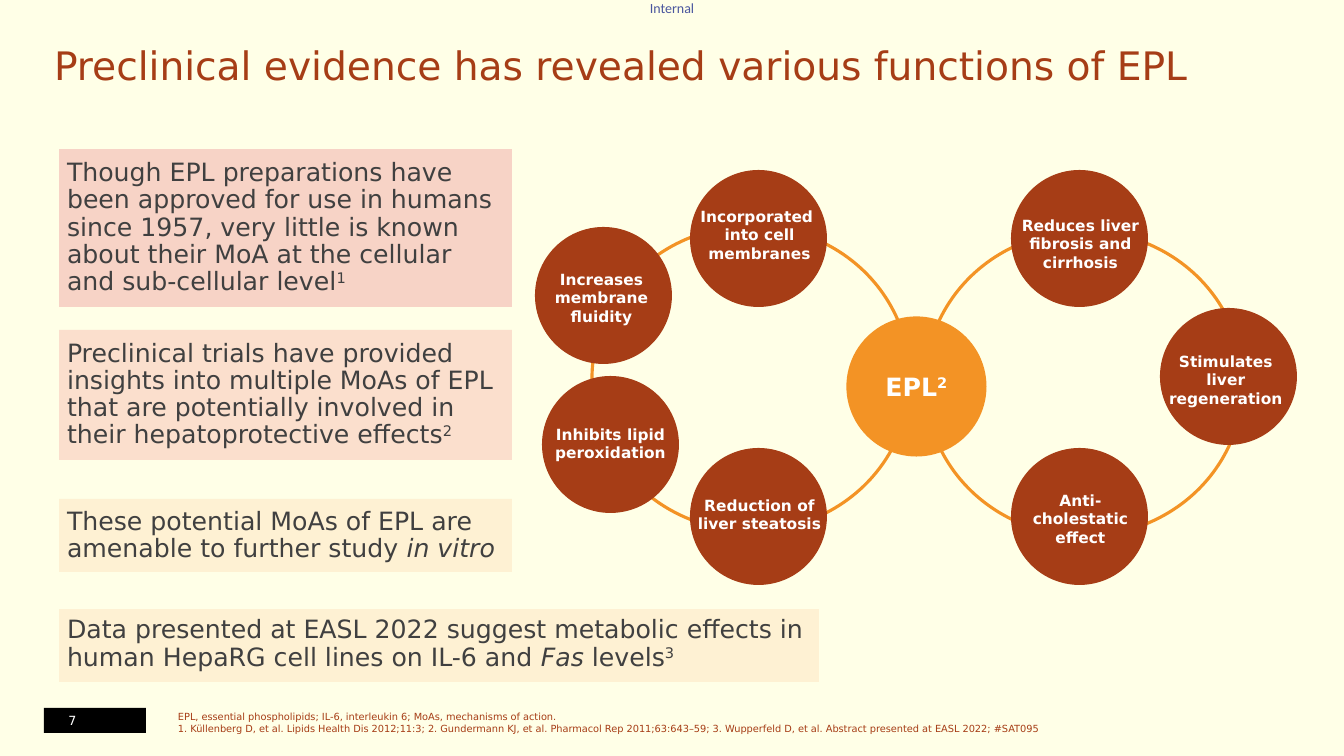
from pptx import Presentation
from pptx.dml.color import RGBColor
from pptx.enum.shapes import MSO_SHAPE as Preset
from pptx.enum.text import MSO_ANCHOR as Anchor, PP_ALIGN as Align
from pptx.util import Pt

EMU_PER_PX = 914400 / 100.8
RUST, ORANGE, CREAM, WHITE = "A63D16", "F39325", "FEF1D3", "FFFFFF"
CIRCLE, LABEL_WIDTH, LABEL_HEIGHT = 137, 131, 47
STATEMENTS = [
    ((59, 149, 453, 158), "F7D3C6", Anchor.MIDDLE,
     [("Though EPL preparations have\nbeen approved for use in humans since 1957, very little is "
       "known about their MoA at the cellular and sub-cellular level", ""), ("1", "super")]),
    ((59, 330, 453, 130), "FBDFCD", Anchor.MIDDLE,
     [("Preclinical trials have provided insights into multiple MoAs of EPL that are potentially "
       "involved in their hepatoprotective effects", ""), ("2", "super")]),
    ((59, 499, 453, 73), CREAM, Anchor.MIDDLE,
     [("These potential MoAs of EPL are amenable to further study ", ""), ("in vitro", "italic")]),
    ((59, 609, 760, 73), CREAM, Anchor.TOP,
     [("Data presented at EASL 2022 suggest metabolic effects in human HepaRG cell lines on "
       "IL-6 and ", ""), ("Fas ", "italic"), ("levels", ""), ("3", "super")]),
]
FUNCTIONS = [
    ((690, 170), (694, 211), "Incorporated \ninto cell membranes"),
    ((535, 227), (536, 274), "Increases membrane fluidity"),
    ((542, 376), (545, 420), "Inhibits lipid peroxidation"),
    ((690, 448), (694, 491), "Reduction of liver steatosis"),
    ((1011, 170), (1015, 220), "Reduces liver fibrosis and cirrhosis"),
    ((1011, 448), (1015, 495), "Anti-cholestatic\neffect"),
    ((1160, 308), (1163, 356), "Stimulates \nliver \nregeneration "),
]
FOOTNOTE = (
    "EPL, essential phospholipids; IL-6, interleukin 6; MoAs, mechanisms of action.\n"
    "1. Küllenberg D, et al. Lipids Health Dis 2012;11:3; 2. Gundermann KJ, et al. Pharmacol Rep "
    "2011;63:643–59; 3. Wupperfeld D, et al. Abstract presented at EASL 2022; #SAT095")


def px(*lengths):
    """Turn pixel lengths into EMU."""
    return [round(length * EMU_PER_PX) for length in lengths]


def paint(color_format, hex_color):
    """Give a fill or a font its solid colour."""
    color_format.rgb = RGBColor.from_string(hex_color)


def write(frame, parts, size, color, bold=False, align=Align.LEFT, anchor=Anchor.MIDDLE,
          inset=0, spacing=1.0, font="DejaVu Sans"):
    """Fill a text frame with one paragraph of plain, italic and superscript parts."""
    frame.word_wrap = True
    frame.vertical_anchor = anchor
    (frame.margin_left, frame.margin_top,
     frame.margin_right, frame.margin_bottom) = px(inset, inset, inset, inset)
    paragraph = frame.paragraphs[0]
    paragraph.text = parts[0][0]
    paragraph.alignment = align
    paragraph.line_spacing = spacing
    paragraph.space_before = Pt(0)
    for text, style in parts[1:]:
        extra = paragraph.add_run()
        extra.text = text
        extra.font.italic = style == "italic"
        if style == "super":
            extra._r.get_or_add_rPr().set("baseline", "30000")
    for run in paragraph.runs:
        run.font.name = font
        run.font.size = Pt(size)
        run.font.bold = bold
        paint(run.font.color, color)


def add_preset(slide, preset, box, fill=None, line=None):
    """Draw a flat preset shape with an optional fill and outline."""
    shape = slide.shapes.add_shape(preset, *px(*box))
    shape.shadow.inherit = False
    if fill:
        shape.fill.solid()
        paint(shape.fill.fore_color, fill)
    else:
        shape.fill.background()
    if line:
        paint(shape.line.color, line)
        shape.line.width = Pt(2.25)
    else:
        shape.line.fill.background()
    return shape


def add_text(slide, box, text, size, color, **layout):
    """Place a text box."""
    write(slide.shapes.add_textbox(*px(*box)).text_frame, [(text, "")], size, color, **layout)


def add_title(slide, text):
    """Move and format the title placeholder."""
    title = slide.shapes.title
    title.left, title.top, title.width, title.height = px(44, 43, 1253, 50)
    write(title.text_frame, [(text, "")], 28, RUST, inset=10, spacing=0.85)


def add_statement(slide, box, fill, anchor, parts):
    """Add a tinted box with a statement."""
    panel = add_preset(slide, Preset.RECTANGLE, box, fill)
    write(panel.text_frame, parts, 18, "404040", anchor=anchor, inset=8, spacing=0.9)


def add_function(slide, corner, label_corner, text):
    """Add a circle with the label of one EPL function."""
    add_preset(slide, Preset.OVAL, (*corner, CIRCLE, CIRCLE), RUST)
    add_text(slide, (*label_corner, LABEL_WIDTH, LABEL_HEIGHT), text, 11, WHITE,
             bold=True, align=Align.CENTER)


def add_rings(slide):
    """Draw the two rings and the EPL hub that joins them."""
    for left, top in ((925, 231), (592, 226)):
        add_preset(slide, Preset.OVAL, (left, top, 318, 305), line=ORANGE)
    hub = add_preset(slide, Preset.OVAL, (848, 318, CIRCLE, CIRCLE), ORANGE, ORANGE)
    write(hub.text_frame, [("EPL", ""), ("2", "super")], 18, WHITE, bold=True,
          align=Align.CENTER)


def main():
    """Build and save the slide."""
    deck = Presentation()
    deck.slide_width, deck.slide_height = px(1344, 756)
    slide = deck.slides.add_slide(deck.slide_layouts[5])
    slide.background.fill.solid()
    paint(slide.background.fill.fore_color, "FFFFE7")
    add_title(slide, "Preclinical evidence has revealed various functions of EPL")
    add_text(slide, (650, 0, 47, 17), "Internal", 10, "4A569E", anchor=Anchor.TOP,
             font="Calibri")
    add_preset(slide, Preset.RECTANGLE, (44, 708, 102, 25), "000000")
    add_text(slide, (44, 708, 57, 25), "7", 9, WHITE, align=Align.CENTER)
    add_text(slide, (178, 714, 1119, 20), FOOTNOTE, 7, RUST, anchor=Anchor.BOTTOM)
    add_rings(slide)
    for function in FUNCTIONS:
        add_function(slide, *function)
    for statement in STATEMENTS:
        add_statement(slide, *statement)
    deck.save("out.pptx")


if __name__ == "__main__":
    main()
